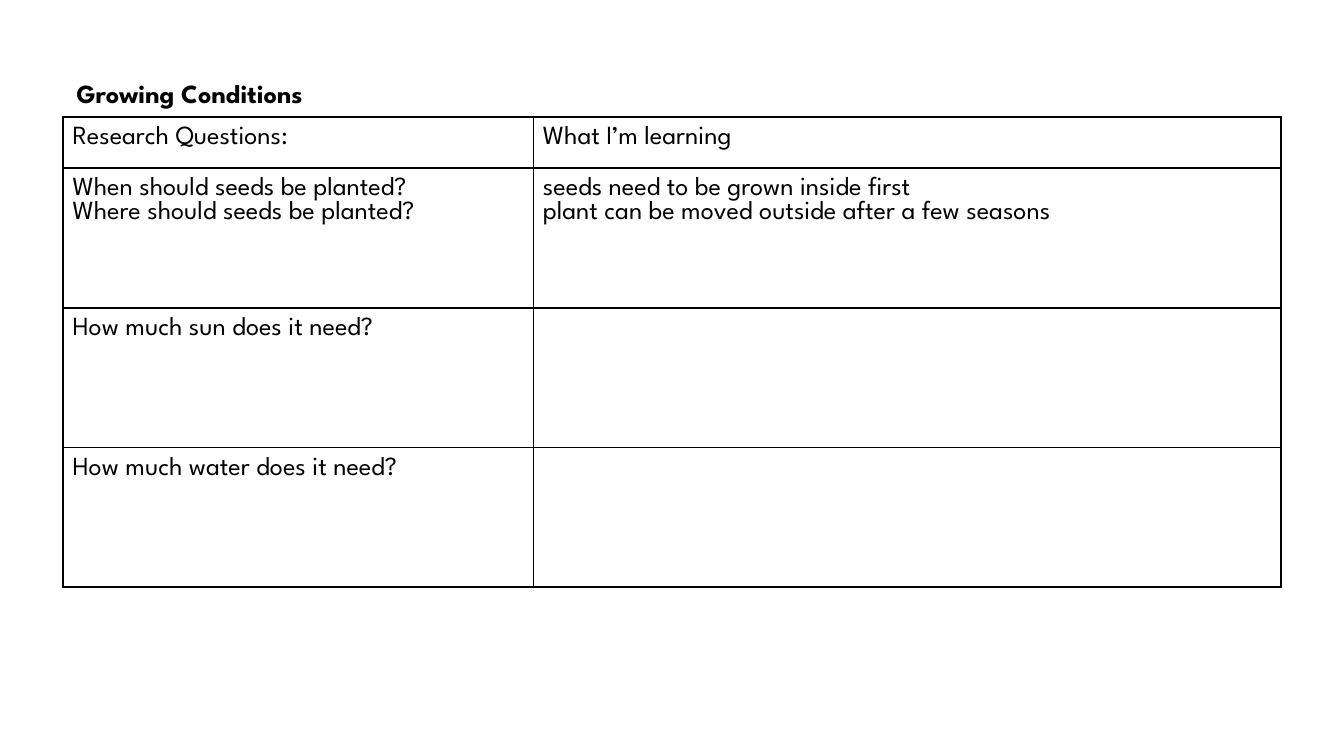
import pptx
import pptx.dml.color
import pptx.enum.text
import pptx.oxml
import pptx.oxml.ns
import pptx.util

Inches = pptx.util.Inches
Pt = pptx.util.Pt

BLACK = pptx.dml.color.RGBColor(0x00, 0x00, 0x00)
FONT = "League Spartan"
TITLE_ONLY_LAYOUT = 5

SLIDE_WIDTH = 10
SLIDE_HEIGHT = SLIDE_WIDTH * 9 / 16
LEFT = 0.47
COLUMN_WIDTHS = [3.5, 5.56]
HEADER_HEIGHT = 0.38
ANSWER_HEIGHT = 1.04
CELL_INSET = 0.07

HEADINGS = (["Research Questions:"], ["What I’m learning"])
RESEARCH = [
    (
        ["When should seeds be planted?", "Where should seeds be planted?"],
        [
            "seeds need to be grown inside first",
            "plant can be moved outside after a few seasons",
        ],
    ),
    (["How much sun does it need?"], []),
    (["How much water does it need?"], []),
]


def write_text(frame, lines, size=14, bold=False, color=BLACK, spacing=None, inset=0.1):
    """Fill a text frame or table cell, one paragraph per line."""
    for side in ("left", "top", "right", "bottom"):
        setattr(frame, f"margin_{side}", Inches(inset))
    text_frame = getattr(frame, "text_frame", frame)
    for index, line in enumerate(lines):
        para = text_frame.add_paragraph() if index else text_frame.paragraphs[0]
        para.alignment = pptx.enum.text.PP_ALIGN.LEFT
        if spacing:
            para.line_spacing = spacing
        span = para.add_run()
        span.text = line
        span.font.name = FONT
        span.font.size = Pt(size)
        span.font.bold = bold
        span.font.color.rgb = color


def add_borders(cell, color=BLACK, width=1):
    properties = cell._tc.get_or_add_tcPr()
    for position, side in enumerate(("lnL", "lnR", "lnT", "lnB")):
        line = pptx.oxml.parse_xml(
            f'<a:{side} {pptx.oxml.ns.nsdecls("a")} w="{Pt(width)}">'
            f'<a:solidFill><a:srgbClr val="{color}"/></a:solidFill></a:{side}>'
        )
        properties.insert(position, line)


def add_title(page, text):
    title = page.shapes.title
    title.left, title.top = Inches(LEFT), Inches(0.44)
    title.width, title.height = Inches(3.28), Inches(0.39)
    frame = title.text_frame
    frame.word_wrap = True
    frame.auto_size = pptx.enum.text.MSO_AUTO_SIZE.NONE
    frame.vertical_anchor = pptx.enum.text.MSO_ANCHOR.TOP
    write_text(frame, [text], bold=True, spacing=1.15)


def add_research_table(page, rows):
    heights = [HEADER_HEIGHT] + [ANSWER_HEIGHT] * (len(rows) - 1)
    table = page.shapes.add_table(
        len(rows), len(COLUMN_WIDTHS), Inches(LEFT), Inches(0.87),
        Inches(sum(COLUMN_WIDTHS)), Inches(sum(heights)),
    ).table
    table.first_row = table.horz_banding = False
    for column, width in zip(table.columns, COLUMN_WIDTHS):
        column.width = Inches(width)
    for row, height, contents in zip(table.rows, heights, rows):
        row.height = Inches(height)
        for cell, lines in zip(row.cells, contents):
            cell.fill.background()
            write_text(cell, lines, inset=CELL_INSET)
            add_borders(cell)


def main():
    deck = pptx.Presentation()
    deck.slide_width, deck.slide_height = Inches(SLIDE_WIDTH), Inches(SLIDE_HEIGHT)
    page = deck.slides.add_slide(deck.slide_layouts[TITLE_ONLY_LAYOUT])
    add_research_table(page, [HEADINGS] + RESEARCH)
    add_title(page, "Growing Conditions")
    deck.save("out.pptx")


if __name__ == "__main__":
    main()
